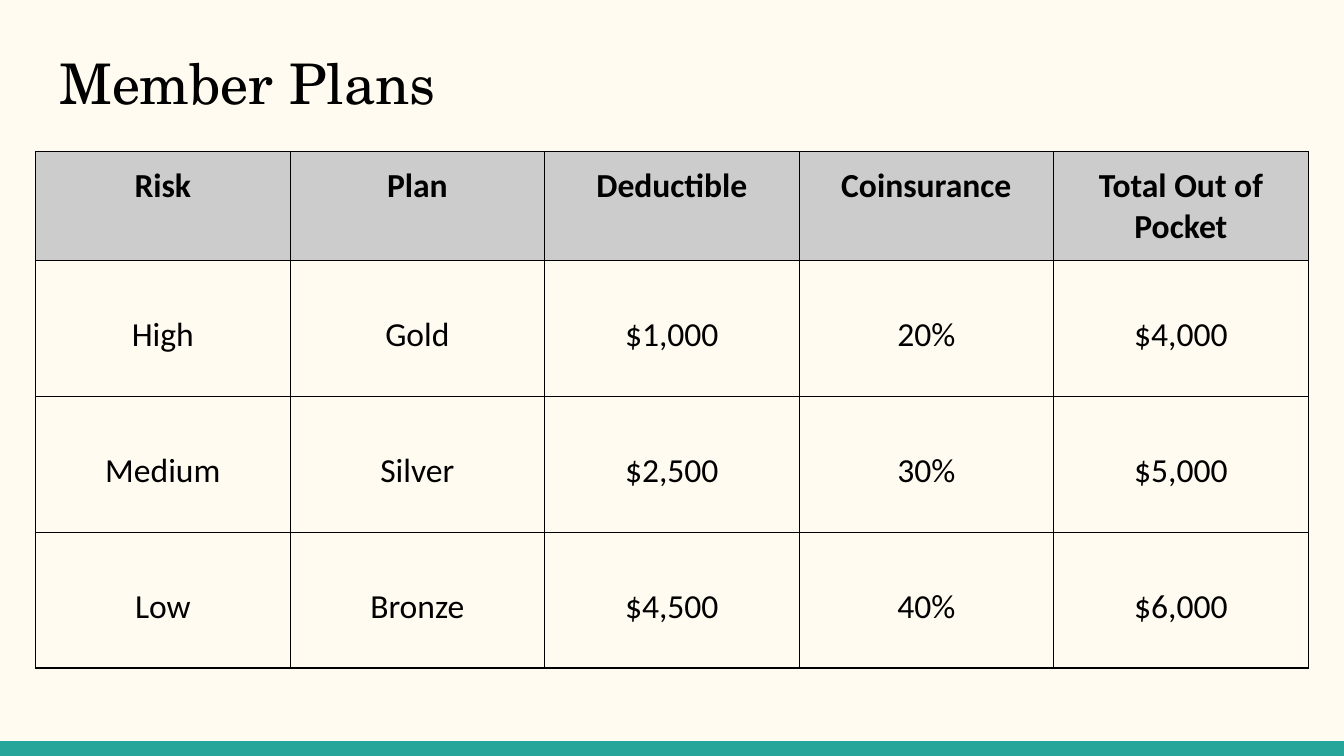
import lxml.etree
import pptx
import pptx.dml.color
import pptx.enum.shapes
import pptx.enum.text
import pptx.oxml.ns
import pptx.util

INK = "000000"
Inches = pptx.util.Inches
Pt = pptx.util.Pt


def color(hex_string):
    return pptx.dml.color.RGBColor.from_string(hex_string)


def add_borders(cell, hex_string, width):
    properties = cell._tc.get_or_add_tcPr()
    for side in ("lnL", "lnR", "lnT", "lnB"):
        line = lxml.etree.SubElement(
            properties, pptx.oxml.ns.qn(f"a:{side}"), w=str(int(width)))
        fill = lxml.etree.SubElement(line, pptx.oxml.ns.qn("a:solidFill"))
        lxml.etree.SubElement(fill, pptx.oxml.ns.qn("a:srgbClr"), val=hex_string)


presentation = pptx.Presentation()
presentation.slide_width = Inches(10)
presentation.slide_height = presentation.slide_width * 9 // 16
width, height = presentation.slide_width, presentation.slide_height

slide = presentation.slides.add_slide(presentation.slide_layouts[5])
slide.background.fill.solid()
slide.background.fill.fore_color.rgb = color("FFFBF0")

# Bottom band
band_height = Inches(0.11)
band = slide.shapes.add_shape(
    pptx.enum.shapes.MSO_SHAPE.RECTANGLE, 0, height - band_height, width, band_height)
band.shadow.inherit = False
band.fill.solid()
band.fill.fore_color.rgb = color("26A69A")
band.line.fill.background()

# Title
title = slide.shapes.title
title.left, title.top = Inches(0.34), Inches(0.26)
title.width, title.height = width - 2 * title.left, Inches(0.67)
frame = title.text_frame
frame.margin_left = frame.margin_right = Inches(0.1)
frame.margin_top = frame.margin_bottom = Inches(0.1)
frame.word_wrap = True
frame.auto_size = pptx.enum.text.MSO_AUTO_SIZE.NONE
frame.vertical_anchor = pptx.enum.text.MSO_ANCHOR.TOP
frame.text = "Member Plans"
paragraph = frame.paragraphs[0]
paragraph.alignment = pptx.enum.text.PP_ALIGN.LEFT
paragraph.font.name = "TeX Gyre Schola"
paragraph.font.size = Pt(30)
paragraph.font.color.rgb = color(INK)

# Plans table
plans = [
    ("Risk", "Plan", "Deductible", "Coinsurance", "Total Out of Pocket"),
    ("High", "Gold", "$1,000", "20%", "$4,000"),
    ("Medium", "Silver", "$2,500", "30%", "$5,000"),
    ("Low", "Bronze", "$4,500", "40%", "$6,000"),
]
header_height, row_height = Inches(0.81), Inches(1.01)
table_width = Inches(9.47)
table = slide.shapes.add_table(
    len(plans), len(plans[0]), (width - table_width) // 2, Inches(1.13), table_width,
    header_height + row_height * (len(plans) - 1)).table
table.first_row = table.horz_banding = False

for row_index, values in enumerate(plans):
    is_header = row_index == 0
    table.rows[row_index].height = header_height if is_header else row_height
    for column_index, value in enumerate(values):
        cell = table.cell(row_index, column_index)
        add_borders(cell, INK, Pt(0.75))
        if is_header:
            cell.fill.solid()
            cell.fill.fore_color.rgb = color("CCCCCC")
        else:
            cell.fill.background()
        cell.margin_left = cell.margin_right = cell.margin_bottom = Inches(0.1)
        cell.margin_top = Inches(0.1 if is_header else 0.4)
        cell.text = value
        paragraph = cell.text_frame.paragraphs[0]
        paragraph.alignment = pptx.enum.text.PP_ALIGN.CENTER
        paragraph.font.name = "Calibri"
        paragraph.font.size = Pt(18)
        paragraph.font.bold = is_header
        paragraph.font.color.rgb = color(INK)

presentation.save("out.pptx")
